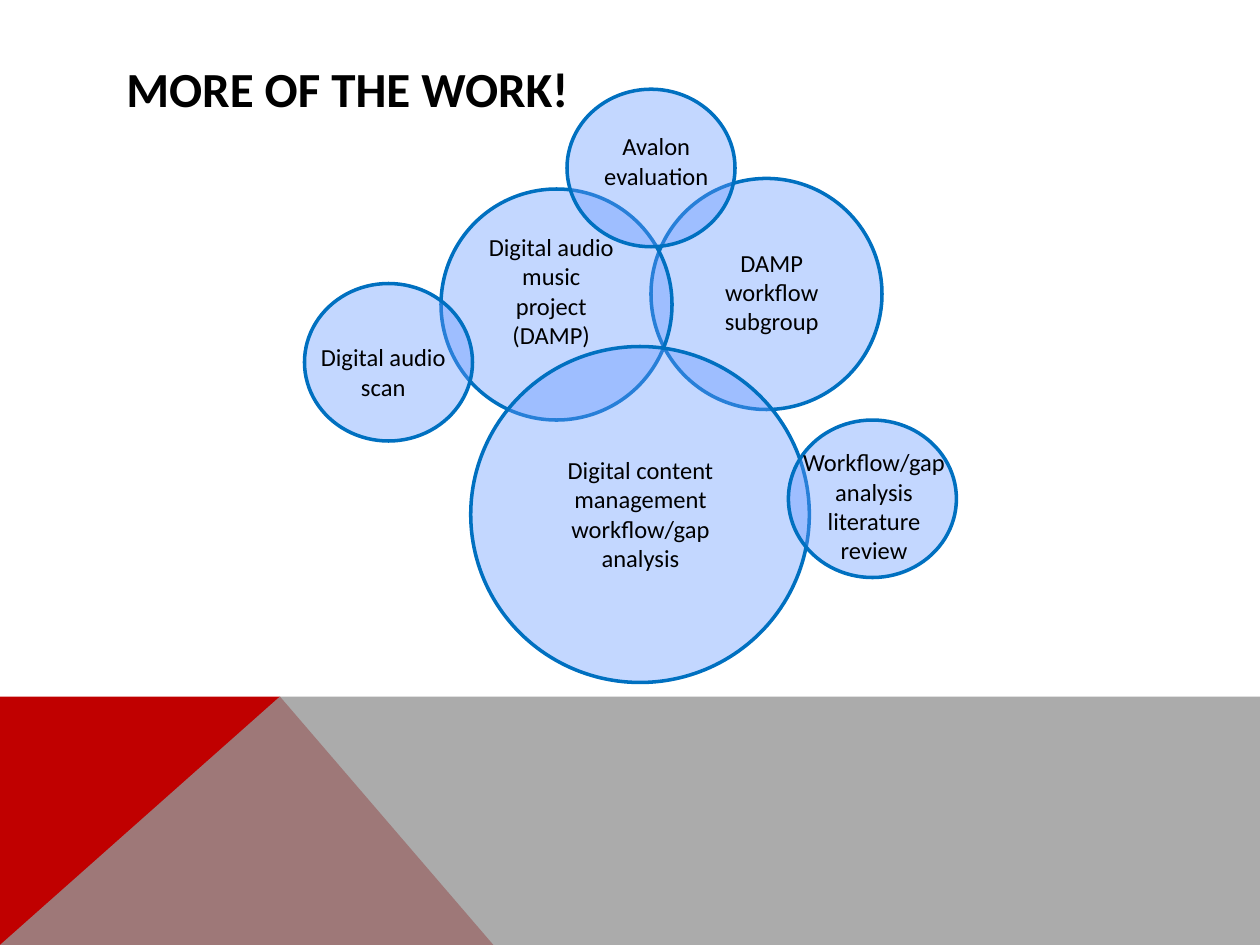
from lxml.etree import SubElement
from pptx import Presentation
from pptx.dml.color import RGBColor
from pptx.enum.shapes import MSO_SHAPE
from pptx.enum.text import MSO_ANCHOR, MSO_AUTO_SIZE, PP_ALIGN
from pptx.oxml.ns import qn
from pptx.util import Pt

BLACK = RGBColor(0x00, 0x00, 0x00)
RED = RGBColor(0xC0, 0x00, 0x00)
GRAY = RGBColor(0x96, 0x96, 0x96)
LIGHT_BLUE = RGBColor(0x66, 0x99, 0xFF)
BLUE = RGBColor(0x00, 0x70, 0xC0)
FONT = "Calibri"

WIDTH, HEIGHT = 720, 540
BAND_TOP, PEAK_X, RED_RIGHT = 397.5, 160.5, 281.5

TITLE = "MORE OF THE WORK!"
SMALL, MEDIUM, LARGE = (96, 90), (132, 132), (193.5, 192)

# Circle (left, top), circle size, label, label box (left, top, width, height)
TOPICS = [
    ((372, 102), MEDIUM, "DAMP workflow subgroup", (396, 138, 90, 58)),
    ((252, 108), MEDIUM, "Digital audio music project (DAMP)", (270, 129, 90, 75)),
    ((324, 51), SMALL, "Avalon evaluation", (330, 71.5, 90, 41)),
    ((269, 198), LARGE, "Digital content management workflow/gap analysis",
     (301.5, 256.5, 129, 75)),
    ((450.5, 240), SMALL, "Workflow/gap analysis literature review",
     (447, 252, 105, 75)),
    ((174, 162), SMALL, "Digital audio scan", (174, 192, 90, 41)),
]


def paint(sp, color, opacity=100):
    sp.shadow.inherit = False
    sp.fill.solid()
    sp.fill.fore_color.rgb = color
    if opacity < 100:
        clr = sp.fill._xPr.find(qn("a:solidFill"))[0]
        SubElement(clr, qn("a:alpha"), val=str(opacity * 1000))


def add_polygon(shapes, points, color, opacity=100):
    builder = shapes.build_freeform(*points[0], scale=Pt(1))
    builder.add_line_segments(points[1:], close=True)
    sp = builder.convert_to_shape()
    paint(sp, color, opacity)
    sp.line.fill.background()


def add_circle(shapes, position, size):
    sp = shapes.add_shape(MSO_SHAPE.OVAL, *map(Pt, position + size))
    paint(sp, LIGHT_BLUE, 39)
    sp.line.color.rgb = BLUE
    sp.line.width = Pt(2)


def add_run(p, text, size, bold=False):
    r = p.add_run()
    r.text = text
    r.font.name = FONT
    r.font.size = Pt(size)
    r.font.bold = bold
    r.font.color.rgb = BLACK


def add_label(shapes, text, box):
    tf = shapes.add_textbox(*map(Pt, box)).text_frame
    tf.word_wrap = True
    tf.auto_size = MSO_AUTO_SIZE.SHAPE_TO_FIT_TEXT
    p = tf.paragraphs[0]
    p.alignment = PP_ALIGN.CENTER
    add_run(p, text, 14)


def set_title(title):
    title.left, title.top, title.width, title.height = map(Pt, (65, 29, 592, 43))
    tf = title.text_frame
    tf.vertical_anchor = MSO_ANCHOR.MIDDLE
    p = tf.paragraphs[0]
    p.alignment = PP_ALIGN.LEFT
    add_run(p, TITLE, 28, bold=True)


def main():
    prs = Presentation()
    prs.slide_width, prs.slide_height = Pt(WIDTH), Pt(HEIGHT)
    shapes = prs.slides.add_slide(prs.slide_layouts[5]).shapes

    add_polygon(shapes, [(0, HEIGHT), (0, BAND_TOP), (PEAK_X, BAND_TOP),
                         (RED_RIGHT, HEIGHT)], RED)
    add_polygon(shapes, [(0, HEIGHT), (PEAK_X, BAND_TOP), (WIDTH, BAND_TOP),
                         (WIDTH, HEIGHT)], GRAY, 80)
    set_title(shapes.title)

    for position, size, _, _ in TOPICS:
        add_circle(shapes, position, size)
    for _, _, text, box in TOPICS:
        add_label(shapes, text, box)

    prs.save("out.pptx")


if __name__ == "__main__":
    main()
